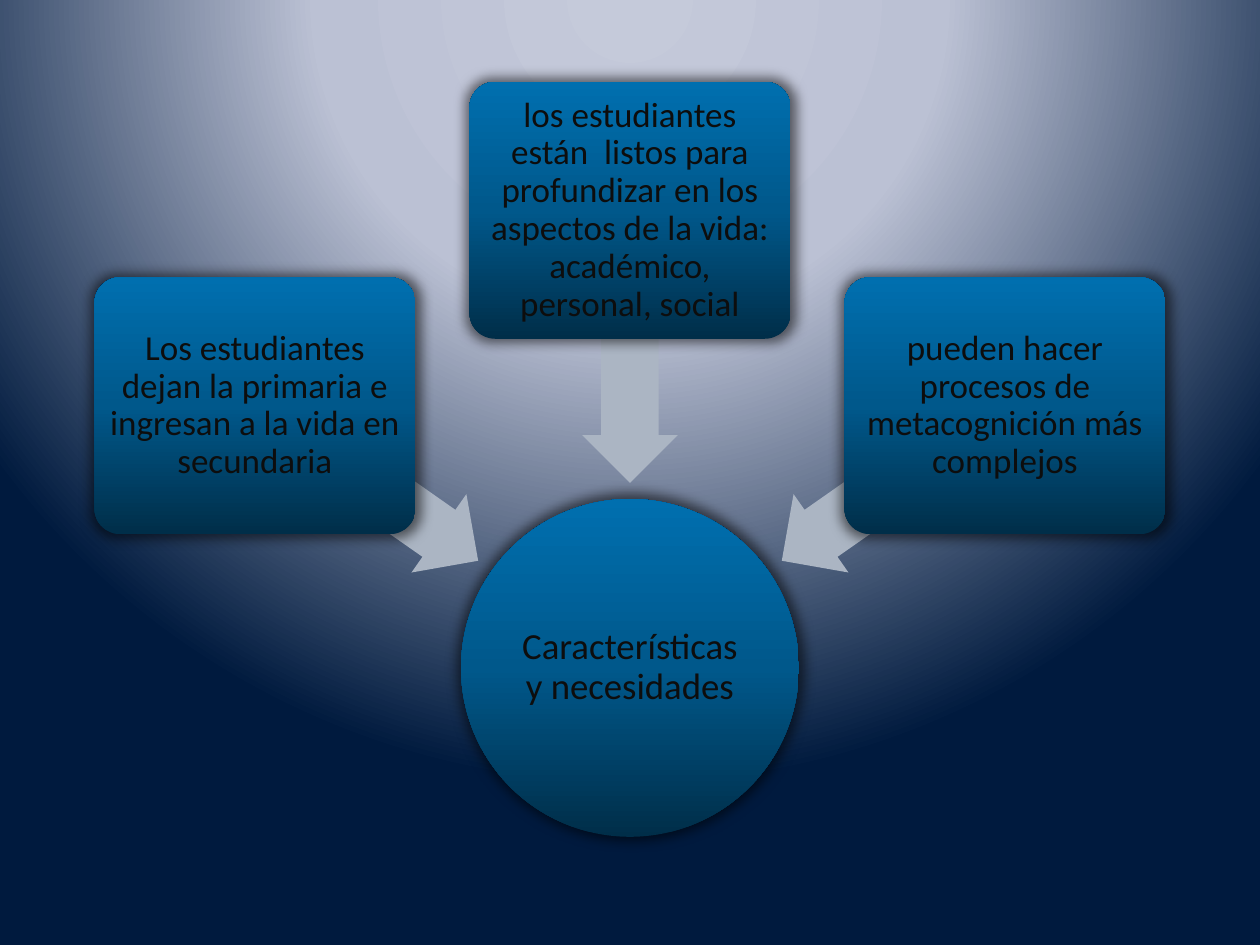
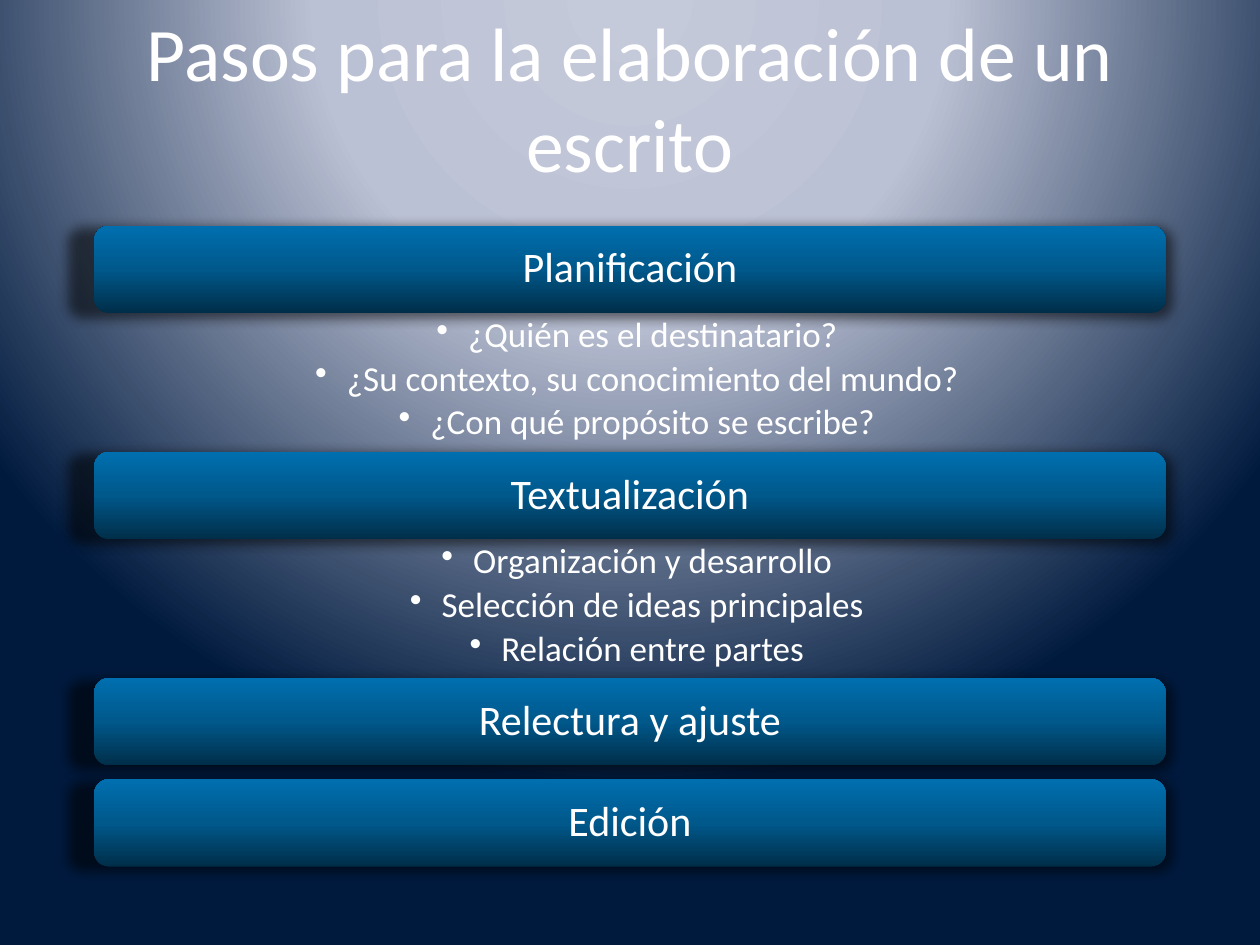
from lxml import etree
from pptx import Presentation
from pptx.dml.color import RGBColor
from pptx.enum import shapes, text
from pptx.oxml import ns
from pptx.util import Cm, Pt

# Content
CENTRAL_IDEA = "Características y necesidades"
# text, column from the centre, box top, arrow centre from the middle, arrow centre height, arrow angle
FEATURES = [
    ("Los estudiantes dejan la primaria e ingresan a la vida en secundaria",
     -1, 5.59, -5.31, 9.73, 215),
    ("los estudiantes están  listos para profundizar en los aspectos de la vida: "
     "académico, personal, social", 0, 1.65, 0, 6.99, 270),
    ("pueden hacer procesos de metacognición más complejos",
     1, 5.59, 5.31, 9.73, 325),
]
STEPS_TITLE = "Pasos para la elaboración de un escrito"
STEPS = [
    ("Planificación", ["¿Quién es el destinatario?",
                       "¿Su contexto, su conocimiento del mundo?",
                       "¿Con qué propósito se escribe?"]),
    ("Textualización", ["Organización y desarrollo",
                        "Selección de ideas principales",
                        "Relación entre partes"]),
    ("Relectura y ajuste", []),
    ("Edición", []),
]

# Shared style
FONT = "Calibri"
WHITE = RGBColor(0xFF, 0xFF, 0xFF)
INK = RGBColor(0x0D, 0x0D, 0x0D)
BLACK = RGBColor(0, 0, 0)
ARROW_GRAY = RGBColor(0xAB, 0xB5, 0xC3)
PANEL_STOPS = [(0, RGBColor(0x00, 0x2E, 0x49)), (50, RGBColor(0x00, 0x58, 0x8B)),
               (100, RGBColor(0x00, 0x6F, 0xAF))]
SKY_STOPS = [(0, RGBColor(0xC5, 0xCA, 0xDA)), (40, RGBColor(0xBB, 0xC1, 0xD4)),
             (100, RGBColor(0x00, 0x1A, 0x3E))]
UPWARD = '<a:lin ang="16200000" scaled="0"/>'
FROM_ABOVE = ('<a:path path="circle">'
              '<a:fillToRect l="50000" t="-80000" r="50000" b="180000"/></a:path>')

# Layout, in centimetres
SLIDE_WIDTH, SLIDE_HEIGHT = 25.4, 19.05
MIDDLE = SLIDE_WIDTH / 2
BOX_WIDTH, BOX_HEIGHT, COLUMN_PITCH = 6.47, 5.18, 7.56
ARROW_LENGTH, ARROW_HEIGHT = 5.49, 1.93
CIRCLE_TOP, CIRCLE_SIZE = 10.06, 6.81
STEP_LEFT, STEP_WIDTH, STEP_TOP = 1.9, 21.6, 4.55
BAR_HEIGHT, BULLETS_HEIGHT, BAR_GAP = 1.76, 2.8, 0.28


def drawing(xml):
    return etree.fromstring(xml.replace(">", f' {ns.nsdecls("a")}>', 1))


def set_gradient(fill, parent, stops, direction):
    """Replace the fill of parent by a gradient."""
    fill.solid()
    stop_xml = "".join(f'<a:gs pos="{position * 1000}"><a:srgbClr val="{color}"/></a:gs>'
                       for position, color in stops)
    gradient = drawing("<a:gradFill>"
                       f"<a:gsLst>{stop_xml}</a:gsLst>{direction}</a:gradFill>")
    parent.replace(parent.find(ns.qn("a:solidFill")), gradient)


def add_shadow(shape):
    effects = shape._element.spPr.find(ns.qn("a:effectLst"))
    effects.append(drawing(
        '<a:outerShdw blurRad="88900" dist="50800" dir="2100000" sx="103000" sy="103000" '
        'algn="br" rotWithShape="0">'
        f'<a:srgbClr val="{BLACK}"><a:alpha val="55000"/></a:srgbClr></a:outerShdw>'))


def write(shape, lines, size, color, insets, anchor=text.MSO_ANCHOR.MIDDLE,
          spacing=0.9, after=0, bullets=False):
    """Fill a shape with centred paragraphs; insets are left, top, right, bottom."""
    frame = shape.text_frame
    frame.word_wrap = True
    frame.vertical_anchor = anchor
    (frame.margin_left, frame.margin_top,
     frame.margin_right, frame.margin_bottom) = map(Cm, insets)
    for index, line in enumerate(lines):
        paragraph = frame.add_paragraph() if index else frame.paragraphs[0]
        paragraph.text = line
        paragraph.alignment = text.PP_ALIGN.CENTER
        paragraph.line_spacing = spacing
        paragraph.space_after = Pt(after)
        if bullets:
            properties = paragraph._p.get_or_add_pPr()
            properties.set("marL", str(Cm(0.64)))
            properties.set("indent", str(-Cm(0.64)))
            properties.append(drawing('<a:buChar char="•"></a:buChar>'))
        paragraph.font.name = FONT
        paragraph.font.size = Pt(size)
        paragraph.font.color.rgb = color


def add_plain(slide, kind, *place):
    shape = slide.shapes.add_shape(kind, *map(Cm, place))
    shape.line.fill.background()
    shape.shadow.inherit = False
    return shape


def add_panel(slide, kind, place, label, size, color, inset):
    """Add a glossy blue shape with a label."""
    panel = add_plain(slide, kind, *place)
    set_gradient(panel.fill, panel._element.spPr, PANEL_STOPS, UPWARD)
    add_shadow(panel)
    write(panel, [label], size, color, [inset] * 4)
    return panel


def add_text(slide, place, *content, **options):
    write(slide.shapes.add_textbox(*map(Cm, place)), *content, **options)


def build_features(slide):
    # Central circle
    add_panel(slide, shapes.MSO_SHAPE.OVAL,
              (MIDDLE - CIRCLE_SIZE / 2, CIRCLE_TOP, CIRCLE_SIZE, CIRCLE_SIZE),
              CENTRAL_IDEA, 21, INK, 0.03)
    # Boxes, each over the tail of its arrow
    for label, column, top, arrow_offset, arrow_middle, angle in FEATURES:
        arrow = add_plain(slide, shapes.MSO_SHAPE.LEFT_ARROW,
                          MIDDLE + arrow_offset - ARROW_LENGTH / 2,
                          arrow_middle - ARROW_HEIGHT / 2, ARROW_LENGTH, ARROW_HEIGHT)
        arrow.adjustments[0], arrow.adjustments[1] = 0.6, 0.5
        arrow.rotation = angle
        arrow.fill.solid()
        arrow.fill.fore_color.rgb = ARROW_GRAY
        left = MIDDLE + column * COLUMN_PITCH - BOX_WIDTH / 2
        box = add_panel(slide, shapes.MSO_SHAPE.ROUNDED_RECTANGLE,
                        (left, top, BOX_WIDTH, BOX_HEIGHT), label, 20, INK, 0.1)
        box.adjustments[0] = 0.1


def build_steps(slide):
    add_text(slide, (STEP_LEFT, 0.33, STEP_WIDTH, 3.25), [STEPS_TITLE], 43.2, WHITE,
             (0.25, 0.13, 0.25, 0.13), spacing=1.0)
    # Bars, stacked with their bullets
    top = STEP_TOP
    for step, details in STEPS:
        add_panel(slide, shapes.MSO_SHAPE.ROUNDED_RECTANGLE,
                  (STEP_LEFT, top, STEP_WIDTH, BAR_HEIGHT), step, 24, WHITE, 0.25)
        top += BAR_HEIGHT
        if details:
            add_text(slide, (STEP_LEFT, top, STEP_WIDTH, BULLETS_HEIGHT), details, 20, WHITE,
                     (0.69, 0.08, 0.41, 0.08), anchor=text.MSO_ANCHOR.TOP,
                     after=3.5, bullets=True)
        top += BULLETS_HEIGHT if details else BAR_GAP


def main():
    presentation = Presentation()
    presentation.slide_width, presentation.slide_height = Cm(SLIDE_WIDTH), Cm(SLIDE_HEIGHT)
    # Background for all slides
    master = presentation.slide_master
    master.background.fill.solid()
    set_gradient(master.background.fill, master.element.find(".//" + ns.qn("p:bgPr")),
                 SKY_STOPS, FROM_ABOVE)
    blank = presentation.slide_layouts[6]
    for build in (build_features, build_steps):
        build(presentation.slides.add_slide(blank))
    presentation.save("out.pptx")


if __name__ == "__main__":
    main()
